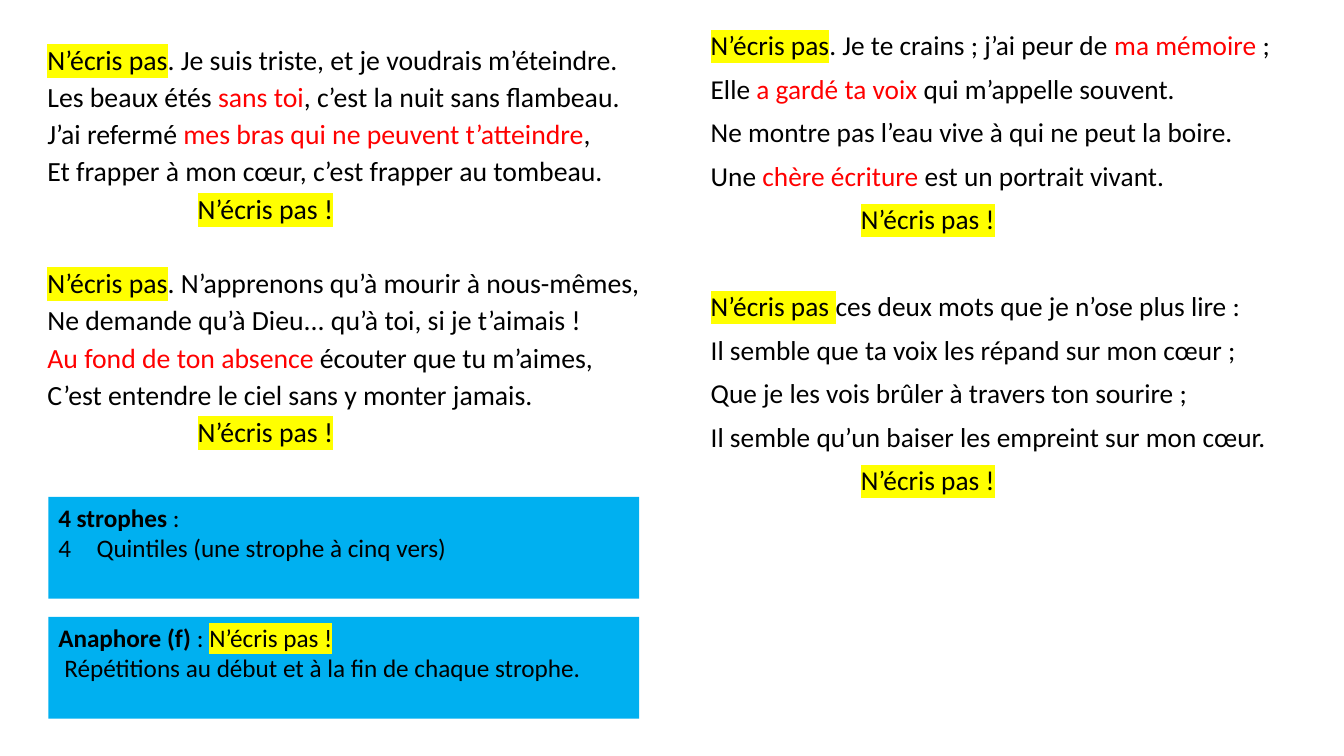
import pptx
import pptx.dml.color
import pptx.enum.shapes
import pptx.enum.text
import pptx.oxml
import pptx.util
from lxml import etree
from pptx.util import Inches

RGBColor = pptx.dml.color.RGBColor
BLACK = RGBColor(0, 0, 0)
RED = RGBColor(0xFF, 0, 0)
YELLOW = RGBColor(0xFF, 0xFF, 0)
BLUE = RGBColor(0, 0xB0, 0xF0)
FONT = "Calibri"

# A run is (text, style); the styles are plain, red, marked and bold.
CALL = ("N’écris pas", "marked")
REFRAIN = [("N’écris pas !", "marked")]

LEFT = [
    [
        [CALL, (". Je suis triste, et je voudrais m’éteindre.", "plain")],
        [("Les beaux étés ", "plain"), ("sans toi", "red"),
         (", c’est la nuit sans flambeau.", "plain")],
        [("J’ai refermé ", "plain"),
         ("mes bras qui ne peuvent t’atteindre", "red"), (",", "plain")],
        [("Et frapper à mon cœur, c’est frapper au tombeau.", "plain")],
    ],
    [
        [CALL, (". N’apprenons qu’à mourir à nous-mêmes,", "plain")],
        [("Ne demande qu’à Dieu... qu’à toi, si je t’aimais !", "plain")],
        [("Au fond de ton absence", "red"),
         (" écouter que tu m’aimes,", "plain")],
        [("C’est entendre le ciel sans y monter jamais.", "plain")],
    ],
]
RIGHT = [
    [
        [CALL, (". Je te crains ; j’ai peur de ", "plain"),
         ("ma mémoire ", "red"), (";", "plain")],
        [("Elle ", "plain"), ("a gardé ta voix ", "red"),
         ("qui m’appelle souvent.", "plain")],
        [("Ne montre pas l’eau vive à qui ne peut la boire.", "plain")],
        [("Une ", "plain"), ("chère écriture ", "red"),
         ("est un portrait vivant.", "plain")],
    ],
    [
        [("N’écris pas ", "marked"),
         ("ces deux mots que je n’ose plus lire :", "plain")],
        [("Il semble que ta voix les répand sur mon cœur ;", "plain")],
        [("Que je les vois brûler à travers ton sourire ;", "plain")],
        [("Il semble qu’un baiser les empreint sur mon cœur.", "plain")],
    ],
]
FORM = [
    [("4 strophes ", "bold"), (":", "plain")],
    [("Quintiles (une strophe à cinq vers)", "plain")],
]
FIGURE = [
    [("Anaphore (f) ", "bold"), (": ", "plain"), *REFRAIN],
    [("Répétitions au début et à la fin de chaque strophe.", "plain")],
]


def mark(run):
    """Highlight the run in yellow."""
    fill = run.font._element.find(pptx.oxml.ns.qn("a:solidFill"))
    light = etree.Element(pptx.oxml.ns.qn("a:highlight"))
    etree.SubElement(light, pptx.oxml.ns.qn("a:srgbClr"), val=str(YELLOW))
    fill.addnext(light)


def add_runs(para, runs, size):
    for text, style in runs:
        run = para.add_run()
        run.text = text
        run.font.size = pptx.util.Pt(size)
        run.font.name = FONT
        run.font.bold = style == "bold"
        run.font.color.rgb = RED if style == "red" else BLACK
        if style == "marked":
            mark(run)


def set_indent(para, left, first=0, start=None):
    """Indent the paragraph; number it from start, or give it no bullet."""
    props = para._p.get_or_add_pPr()
    props.set("marL", str(Inches(left)))
    props.set("indent", str(Inches(first)))
    if start is None:
        etree.SubElement(props, pptx.oxml.ns.qn("a:buNone"))
    else:
        etree.SubElement(props, pptx.oxml.ns.qn("a:buFont"), typeface="+mj-lt")
        etree.SubElement(props, pptx.oxml.ns.qn("a:buAutoNum"),
                         type="arabicPlain", startAt=str(start))


def set_frame(frame):
    frame.word_wrap = True
    frame.auto_size = pptx.enum.text.MSO_AUTO_SIZE.NONE
    frame.vertical_anchor = pptx.enum.text.MSO_ANCHOR.TOP
    frame.margin_left = frame.margin_right = Inches(0.1)
    frame.margin_top = frame.margin_bottom = Inches(0.05)


def add_para(frame, index):
    para = frame.paragraphs[0] if index == 0 else frame.add_paragraph()
    para.alignment = pptx.enum.text.PP_ALIGN.LEFT
    return para


def write_poem(frame, stanzas, size, spacing, gap):
    """Write the stanzas, each closed by the refrain, gap points apart."""
    set_frame(frame)
    count = 0
    for stanza in stanzas:
        for row, runs in enumerate([*stanza, REFRAIN]):
            para = add_para(frame, count)
            para.line_spacing = spacing
            before = 0 if count == 0 else gap if row == 0 else 10
            para.space_before = pptx.util.Pt(before)
            set_indent(para, 1.49 if runs is REFRAIN else 0)
            add_runs(para, runs, size)
            count += 1


def add_note(slide, top, lines, left, first=0, start=None):
    """Add a blue box whose second line has its own indent."""
    box = slide.shapes.add_shape(
        pptx.enum.shapes.MSO_SHAPE.RECTANGLE,
        Inches(0.48), Inches(top), Inches(5.86), Inches(1.01))
    box.shadow.inherit = False
    box.fill.solid()
    box.fill.fore_color.rgb = BLUE
    box.line.fill.background()
    set_frame(box.text_frame)
    for index, runs in enumerate(lines):
        para = add_para(box.text_frame, index)
        if index:
            set_indent(para, left, first, start)
        add_runs(para, runs, 18)


def main():
    deck = pptx.Presentation()
    deck.slide_width, deck.slide_height = Inches(13.33), Inches(7.5)
    slide = deck.slides.add_slide(deck.slide_layouts[1])
    title = slide.shapes.title
    title._element.getparent().remove(title._element)

    body = slide.placeholders[1]
    body.left, body.top = Inches(0.37), Inches(0.46)
    body.width, body.height = Inches(6.22), Inches(4.25)
    write_poem(body.text_frame, LEFT, 19.8, 0.7, 36.5)

    side = slide.shapes.add_textbox(
        Inches(6.95), Inches(0.27), Inches(6.15), Inches(5.35))
    write_poem(side.text_frame, RIGHT, 19.5, 0.9, 41)

    add_note(slide, 4.93, FORM, 0.38, -0.38, 4)
    add_note(slide, 6.12, FIGURE, 0.06)
    deck.save("out.pptx")


if __name__ == "__main__":
    main()
